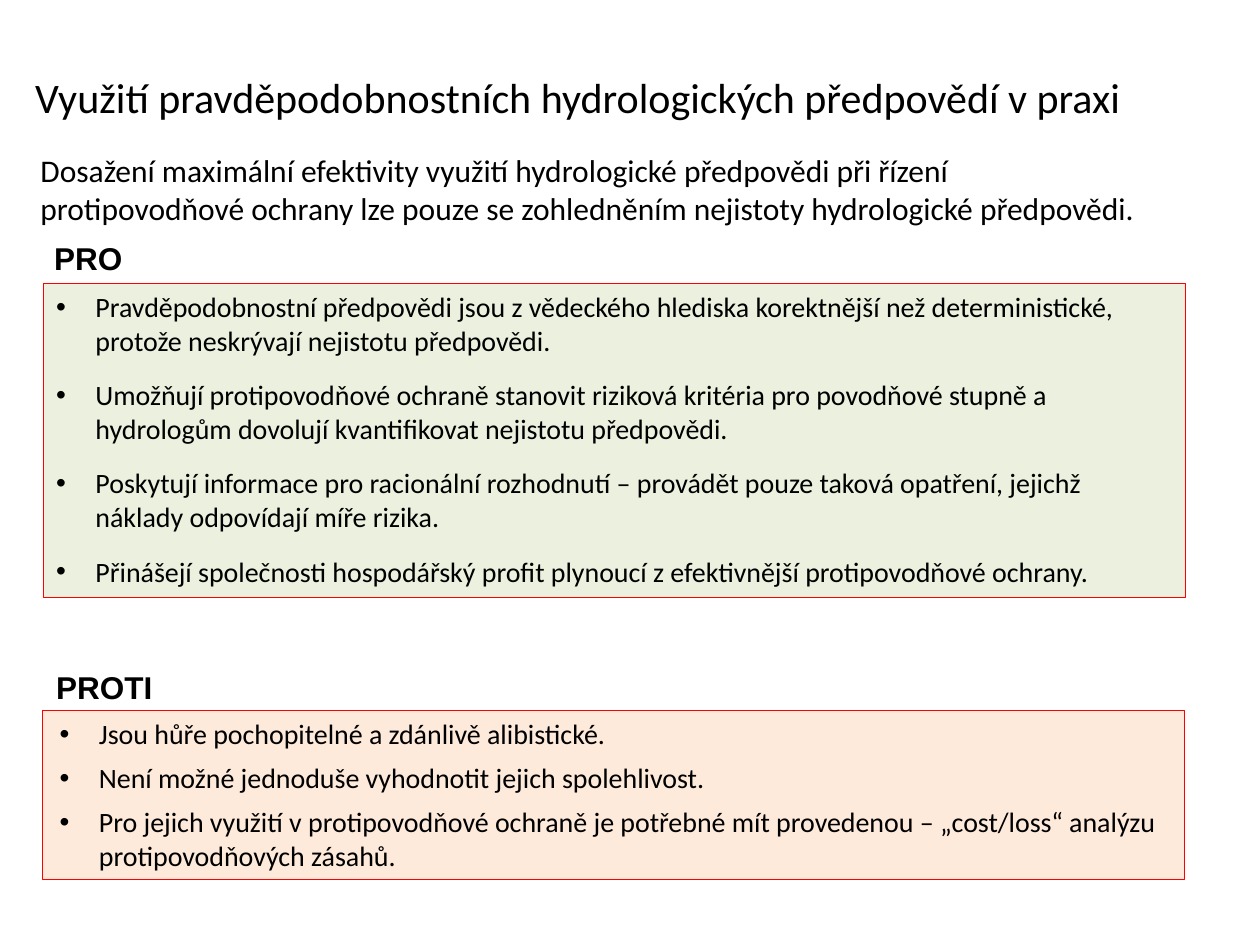
from dataclasses import dataclass

from lxml import etree
from pptx import Presentation
from pptx.dml.color import RGBColor
from pptx.enum.shapes import MSO_SHAPE
from pptx.enum.text import MSO_ANCHOR, MSO_AUTO_SIZE, PP_ALIGN
from pptx.oxml.ns import qn
from pptx.util import Pt

RECTANGLE = MSO_SHAPE.RECTANGLE
TOP = MSO_ANCHOR.TOP
GROW, FIXED = MSO_AUTO_SIZE.SHAPE_TO_FIT_TEXT, MSO_AUTO_SIZE.NONE
LEFT = PP_ALIGN.LEFT


@dataclass(frozen=True)
class Theme:
    body_font: str = "Calibri"
    label_font: str = "Arial"
    title_size: float = 24
    lead_size: float = 18
    list_size: float = 16
    text: str = "000000"
    border: str = "FF0000"
    pro_fill: str = "EBF1DE"
    contra_fill: str = "FDEADA"


THEME = Theme()

TITLE = "Využití pravděpodobnostních hydrologických předpovědí v praxi"
INTRO = (
    "Dosažení maximální efektivity využití hydrologické předpovědi při řízení "
    "protipovodňové ochrany lze pouze se zohledněním nejistoty hydrologické předpovědi."
)
# Boxes are (left, top, width, height) in points.
SECTIONS = [
    {
        "label": "PRO",
        "label_box": (23.8, 133.2, 54, 28.8),
        "box": (25, 162, 652.3, 179.3),
        "fill": THEME.pro_fill,
        "indent": 22.5,
        "gap": 12,
        "autosize": GROW,
        "points": [
            "Pravděpodobnostní předpovědi jsou z vědeckého hlediska korektnější než "
            "deterministické, protože neskrývají nejistotu předpovědi.",
            "Umožňují protipovodňové ochraně stanovit riziková kritéria pro povodňové stupně a "
            "hydrologům dovolují kvantifikovat nejistotu předpovědi.",
            "Poskytují informace pro racionální rozhodnutí – provádět pouze taková opatření, "
            "jejichž náklady odpovídají míře rizika.",
            "Přinášejí společnosti hospodářský profit plynoucí z efektivnější "
            "protipovodňové ochrany.",
        ],
    },
    {
        "label": "PROTI",
        "label_box": (25, 378, 70, 28.8),
        "box": (24.5, 406, 652.3, 96.5),
        "fill": THEME.contra_fill,
        "indent": 25,
        "gap": 6,
        "autosize": FIXED,
        "points": [
            "Jsou hůře pochopitelné a zdánlivě alibistické.",
            "Není možné jednoduše vyhodnotit jejich spolehlivost.",
            "Pro jejich využití v protipovodňové ochraně je potřebné mít provedenou – "
            "„cost/loss“ analýzu protipovodňových zásahů.",
        ],
    },
]


def write_text(shape, paragraphs, *, size, font=THEME.body_font, bold=False, wrap=True,
               autosize=FIXED, indent=0, hanging=0, gap=0, bullet=None):
    frame = shape.text_frame
    frame.word_wrap = wrap
    frame.auto_size = autosize
    frame.vertical_anchor = TOP
    for index, text in enumerate(paragraphs):
        paragraph = frame.add_paragraph() if index else frame.paragraphs[0]
        paragraph.text = text
        paragraph.alignment = LEFT
        paragraph.space_before = Pt(gap if index else 0)
        properties = paragraph._p.get_or_add_pPr()
        properties.set("marL", str(Pt(indent)))
        properties.set("indent", str(Pt(-hanging)))
        if bullet:
            etree.SubElement(properties, qn("a:buFont"), typeface="Arial")
            etree.SubElement(properties, qn("a:buChar"), char=bullet)
        paragraph.font.name = font
        paragraph.font.size = Pt(size)
        paragraph.font.bold = bold
        paragraph.font.color.rgb = RGBColor.from_string(THEME.text)


def add_text(slide, box, text, **text_format):
    write_text(slide.shapes.add_textbox(*map(Pt, box)), [text], **text_format)


def add_panel(slide, section):
    panel = slide.shapes.add_shape(RECTANGLE, *map(Pt, section["box"]))
    panel.shadow.inherit = False
    panel.fill.solid()
    panel.fill.fore_color.rgb = RGBColor.from_string(section["fill"])
    panel.line.color.rgb = RGBColor.from_string(THEME.border)
    panel.line.width = Pt(0.75)
    write_text(panel, section["points"], size=THEME.list_size, autosize=section["autosize"],
               indent=section["indent"], hanging=22.5, gap=section["gap"], bullet="•")


def main():
    presentation = Presentation()
    presentation.slide_width, presentation.slide_height = Pt(720), Pt(540)
    slide = presentation.slides.add_slide(presentation.slide_layouts[6])
    add_text(slide, (13, 37.5, 635, 36), TITLE, size=THEME.title_size, wrap=False, autosize=GROW)
    add_text(slide, (13, 83, 646.5, 62.5), INTRO, size=THEME.lead_size, indent=3)
    for section in SECTIONS:
        add_panel(slide, section)
        add_text(slide, section["label_box"], section["label"], size=THEME.lead_size,
                 font=THEME.label_font, bold=True, wrap=False, autosize=GROW)
    presentation.save("out.pptx")


if __name__ == "__main__":
    main()
